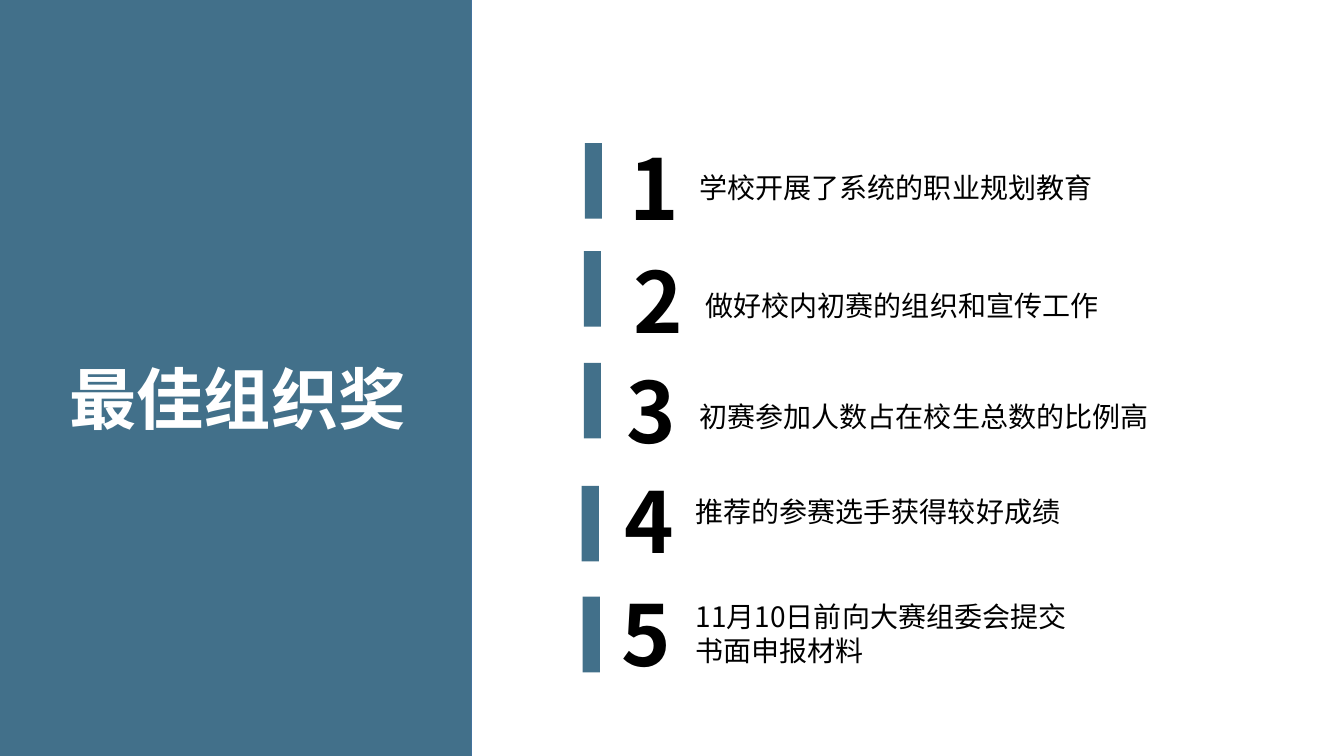
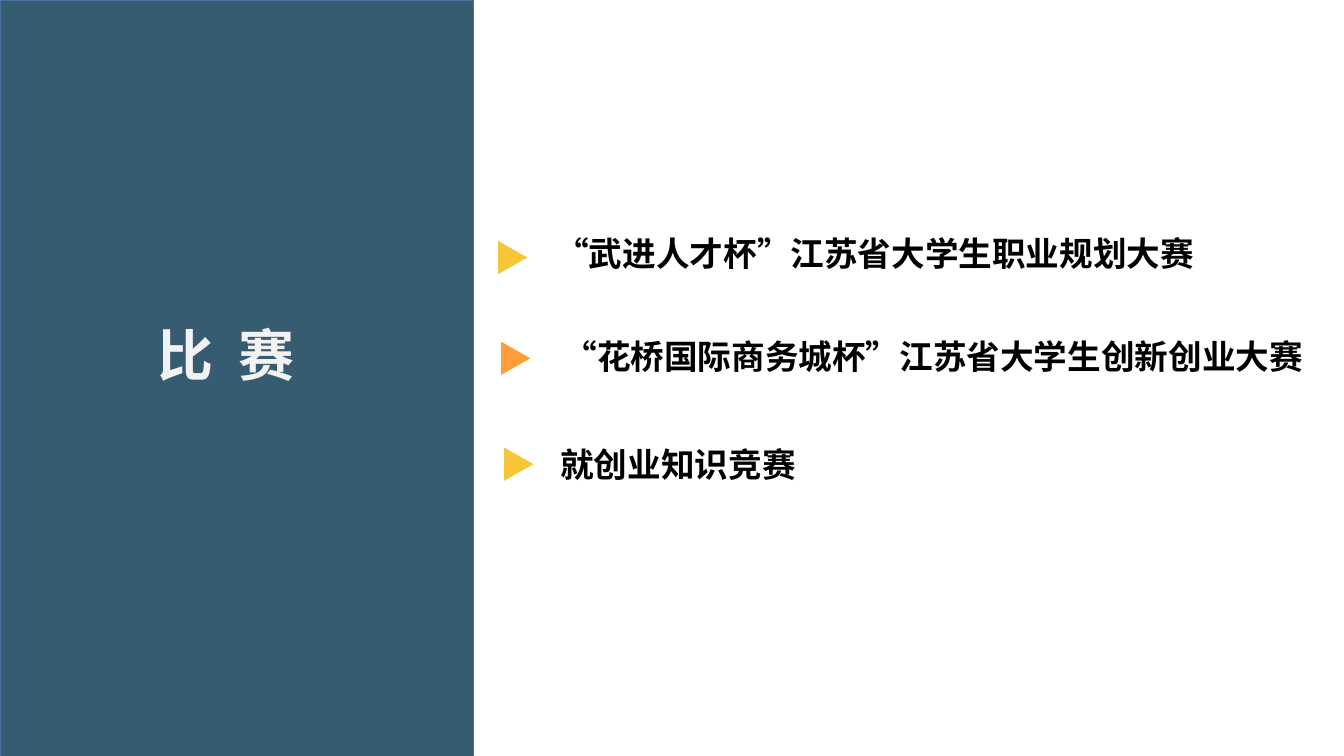
from pptx import Presentation
from pptx.dml.color import RGBColor
from pptx.enum.shapes import MSO_SHAPE
from pptx.enum.text import MSO_ANCHOR
from pptx.oxml.ns import qn
from pptx.util import Emu, Pt
from lxml import etree

RECTANGLE = MSO_SHAPE.RECTANGLE
TRIANGLE = MSO_SHAPE.ISOSCELES_TRIANGLE
TOP, MIDDLE = MSO_ANCHOR.TOP, MSO_ANCHOR.MIDDLE
EMU_PER_PX = 9144
SANS, NUMERAL, LATIN = "Noto Sans CJK SC", "Noto Sans CJK KR", "Arial"
COLORS = {
    "steel": "42708A", "deep": "365C71", "edge": "43739E",
    "yellow": "F5C638", "orange": "FF9D38",
    "black": "000000", "white": "FFFFFF", "pale": "F2F2F2",
}
REASONS = [
    ((580, 142), (614, 130), (684, 164), ["学校开展了系统的职业规划教育"]),
    ((579, 249), (618, 243), (690, 281), ["做好校内初赛的组织和宣传工作"]),
    ((579, 360), (612, 352), (684, 391), ["初赛参加人数占在校生总数的比例高"]),
    ((577, 482), (610, 461), (680, 486), ["推荐的参赛选手获得较好成绩"]),
    ((578, 592), (607, 573), (680, 590), ["11月10日前向大赛组委会提交", "书面申报材料"]),
]
CONTESTS = [
    ((492, 241), (541, 226), "yellow", "“武进人才杯”江苏省大学生职业规划大赛"),
    ((495, 341), (549, 328), "orange", "“花桥国际商务城杯”江苏省大学生创新创业大赛"),
    ((498, 446), (546, 435), "yellow", "就创业知识竞赛"),
]


def px(*lengths):
    return [Emu(length * EMU_PER_PX) for length in lengths]


class Deck:
    """Hold the shared style and the current slide."""

    def __init__(self):
        self.presentation = Presentation()
        self.presentation.slide_width, self.presentation.slide_height = px(1333, 750)
        self.slide = None

    def new_slide(self):
        self.slide = self.presentation.slides.add_slide(self.presentation.slide_layouts[6])

    def shape(self, kind, box, fill, line=None, rotation=0):
        shape = self.slide.shapes.add_shape(kind, *px(*box))
        shape.shadow.inherit = False
        shape.rotation = rotation
        shape.fill.solid()
        shape.fill.fore_color.rgb = RGBColor.from_string(COLORS[fill])
        if line:
            shape.line.color.rgb = RGBColor.from_string(COLORS[line])
            shape.line.width = Pt(1)
        else:
            shape.line.fill.background()

    def text(self, box, lines, size, font=SANS, color="black", bold=False,
             anchor=TOP, spacing=0):
        frame = self.slide.shapes.add_textbox(*px(*box)).text_frame
        frame.word_wrap = True
        frame.vertical_anchor = anchor
        for index, line in enumerate(lines):
            paragraph = frame.add_paragraph() if index else frame.paragraphs[0]
            run = paragraph.add_run()
            run.text = line
            run.font.size = Pt(size)
            run.font.bold = bold
            run.font.name = font
            run.font.color.rgb = RGBColor.from_string(COLORS[color])
            properties = run.font._element
            properties.set("lang", "zh-CN")
            if spacing:
                properties.set("spc", str(spacing * 100))
            east_asian = etree.SubElement(properties, qn("a:ea"))
            east_asian.set("typeface", SANS if font == LATIN else font)

    def title_panel(self, corner, fill, title_box, title, size, color, spacing=0):
        self.shape(RECTANGLE, (*corner, 470, 763), fill, line="edge")
        self.text(title_box, [title], size, color=color, bold=True,
                  anchor=MIDDLE, spacing=spacing)

    def reason(self, number, bar, numeral, label, lines):
        self.shape(RECTANGLE, (*bar, 17, 75), "steel")
        self.text((*numeral, 79, 111), [str(number)], 60, NUMERAL, bold=True)
        self.text((*label, 495, 10 + 34 * len(lines)), lines, 20)

    def contest(self, marker, label, color, name):
        self.shape(TRIANGLE, (*marker, 33, 29), color, rotation=90)
        self.text((*label, 1333 - label[0], 50), [name], 24, LATIN, bold=True)


def main():
    deck = Deck()

    deck.new_slide()
    deck.title_panel((-2, -5), "steel", (59, 349, 400, 91), "最佳组织奖", 48, "white")
    for number, reason in enumerate(REASONS, 1):
        deck.reason(number, *reason)

    deck.new_slide()
    deck.title_panel((0, 0), "deep", (146, 313, 300, 76), "比赛", 40, "pale", spacing=18)
    for contest in CONTESTS:
        deck.contest(*contest)

    deck.presentation.save("out.pptx")


if __name__ == "__main__":
    main()
